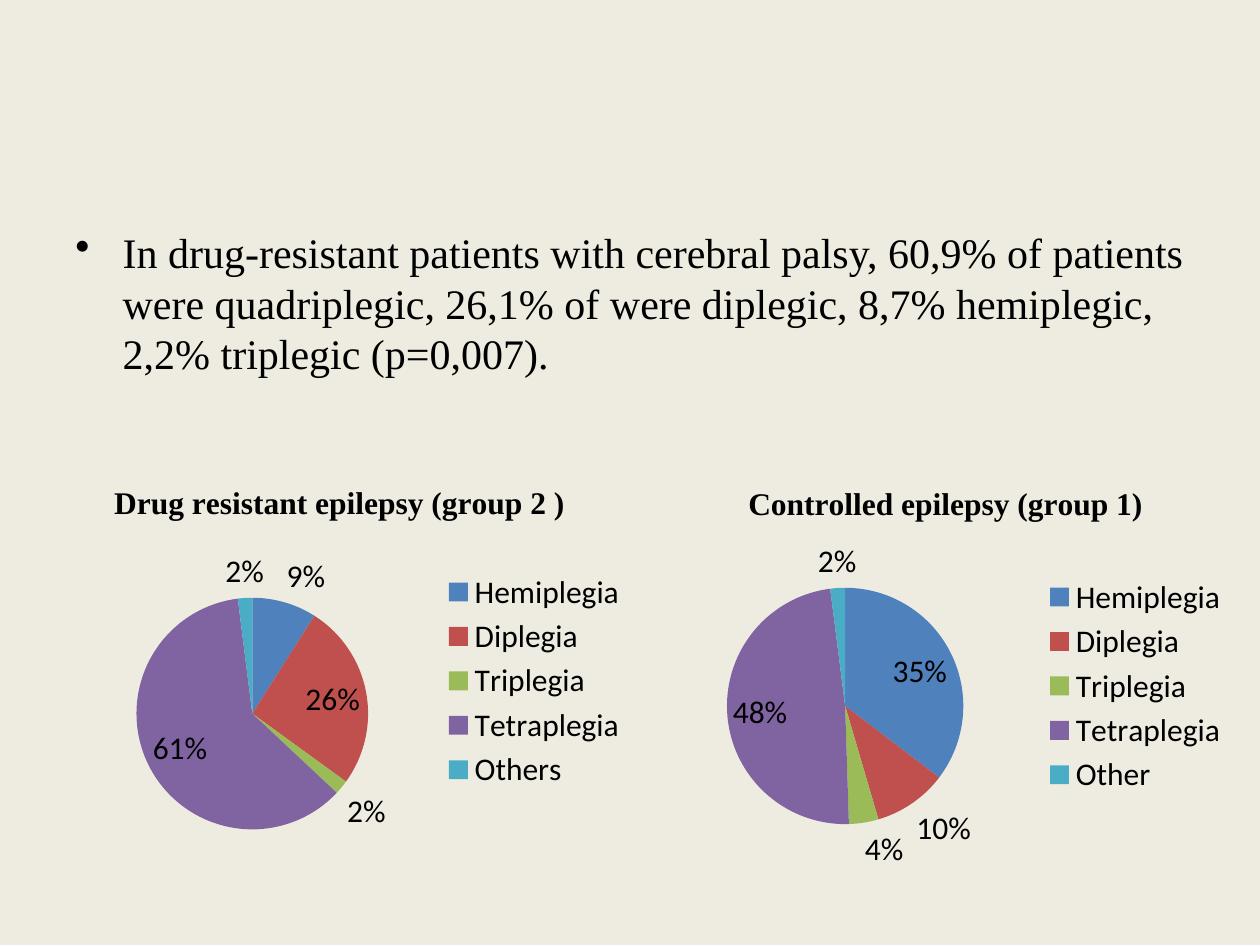
from lxml import etree
from pptx import Presentation
from pptx.chart.data import CategoryChartData
from pptx.dml.color import RGBColor
from pptx.enum.chart import XL_CHART_TYPE, XL_LABEL_POSITION, XL_LEGEND_POSITION
from pptx.oxml import parse_xml
from pptx.oxml.ns import nsdecls, qn
from pptx.util import Pt

PIE = XL_CHART_TYPE.PIE
BEST_FIT = XL_LABEL_POSITION.BEST_FIT
LEGEND_RIGHT = XL_LEGEND_POSITION.RIGHT

BACKGROUND = RGBColor(0xEE, 0xEC, 0xE1)
BLACK = RGBColor(0, 0, 0)
SLICE_COLORS = [
    RGBColor(0x4F, 0x81, 0xBD),
    RGBColor(0xC0, 0x50, 0x4D),
    RGBColor(0x9B, 0xBB, 0x59),
    RGBColor(0x80, 0x64, 0xA2),
    RGBColor(0x4B, 0xAC, 0xC6),
]
SERIF = "Times New Roman"
SANS = "Calibri"

# Content
FINDING = (
    "In drug-resistant patients with cerebral palsy, 60,9% of patients were "
    "quadriplegic, 26,1% of were diplegic, 8,7% hemiplegic, 2,2% triplegic "
    "(p=0,007)."
)
PALSY_TYPES = ["Hemiplegia", "Diplegia", "Triplegia", "Tetraplegia"]
# box: left, top, width, height in points; plot: x, y, w, h as chart fractions
CHARTS = [
    {
        "title": "Drug resistant epilepsy (group 2 )",
        "categories": PALSY_TYPES + ["Others"],
        "values": [9, 26, 2, 61, 2],
        "box": (22.3, 264.2, 343.4, 249.8),
        "plot": (0.16, 0.31, 0.39, 0.53),
    },
    {
        "title": "Controlled epilepsy (group 1)",
        "categories": PALSY_TYPES + ["Other"],
        "values": [35, 10, 4, 48, 2],
        "box": (371.5, 264.2, 337.7, 255.6),
        "plot": (0.13, 0.28, 0.4, 0.53),
    },
]


def style_font(font, size, name, bold=False):
    font.size, font.name, font.bold = Pt(size), name, bold
    font.color.rgb = BLACK


def add_finding(slide):
    text_box = slide.shapes.add_textbox(Pt(36), Pt(126), Pt(648), Pt(356.4))
    text_box.text_frame.word_wrap = True
    paragraph = text_box.text_frame.paragraphs[0]
    paragraph.text = FINDING
    paragraph.space_before = Pt(4.8)
    style_font(paragraph.font, 24, SERIF)
    # Hanging bullet
    properties = paragraph._p.get_or_add_pPr()
    properties.set("marL", str(Pt(27)))
    properties.set("indent", str(-Pt(27)))
    bullet = parse_xml(f'<a:buChar {nsdecls("a")} char="•"/>')
    properties.find(qn("a:defRPr")).addprevious(bullet)


def set_plot_layout(chart, fractions):
    plot_area = chart._chartSpace.chart.plotArea
    for old_layout in plot_area.findall(qn("c:layout")):
        plot_area.remove(old_layout)
    layout = etree.Element(qn("c:layout"))
    manual = etree.SubElement(layout, qn("c:manualLayout"))
    settings = [("layoutTarget", "inner"), ("xMode", "edge"), ("yMode", "edge")]
    settings += zip("xywh", fractions)
    for tag, value in settings:
        etree.SubElement(manual, qn(f"c:{tag}")).set("val", str(value))
    plot_area.insert(0, layout)


def add_pie(slide, content):
    data = CategoryChartData()
    data.categories = content["categories"]
    data.add_series("Series 1", content["values"])
    box = [Pt(length) for length in content["box"]]
    chart = slide.shapes.add_chart(PIE, *box, data).chart
    style_font(chart.font, 18, SANS)

    # Title
    chart.has_title = True
    title = chart.chart_title
    title.include_in_layout = False
    title.text_frame.text = content["title"]
    style_font(title.text_frame.paragraphs[0].font, 18, SERIF, bold=True)

    # Legend
    chart.has_legend = True
    chart.legend.position = LEGEND_RIGHT
    chart.legend.include_in_layout = False
    style_font(chart.legend.font, 18, SANS)

    # Slices and percentages
    plot = chart.plots[0]
    plot.vary_by_categories = True
    for index, color in enumerate(SLICE_COLORS):
        fill = plot.series[0].points[index].format.fill
        fill.solid()
        fill.fore_color.rgb = color
    plot.has_data_labels = True
    labels = plot.data_labels
    labels.show_value = False
    labels.show_percentage = True
    labels.number_format = "0%"
    labels.number_format_is_linked = False
    labels.position = BEST_FIT
    style_font(labels.font, 18, SANS)
    set_plot_layout(chart, content["plot"])


def main():
    presentation = Presentation()
    presentation.slide_width, presentation.slide_height = Pt(720), Pt(540)
    slide = presentation.slides.add_slide(presentation.slide_layouts[6])
    slide.background.fill.solid()
    slide.background.fill.fore_color.rgb = BACKGROUND
    add_finding(slide)
    for content in CHARTS:
        add_pie(slide, content)
    presentation.save("out.pptx")


if __name__ == "__main__":
    main()
